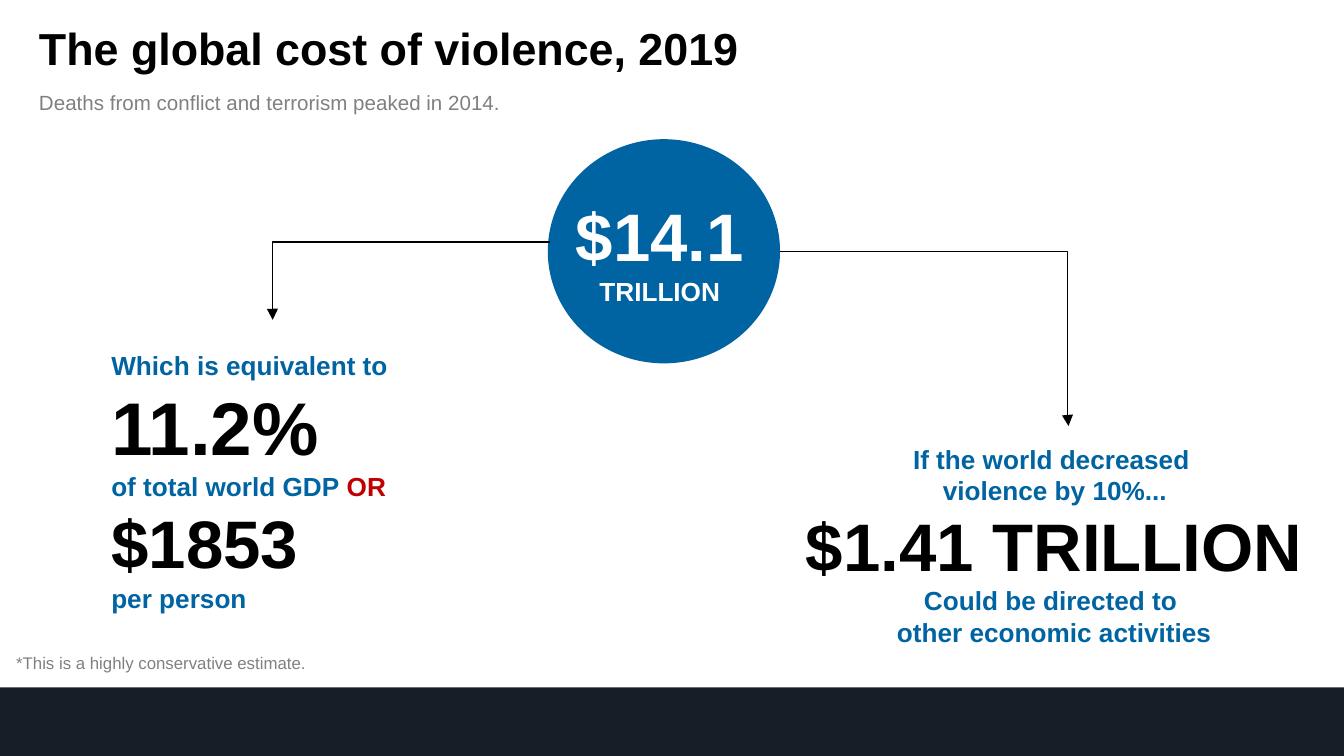
from pptx import Presentation
from pptx.dml.color import RGBColor
from pptx.enum.shapes import MSO_CONNECTOR as CONN, MSO_SHAPE as SHAPE
from pptx.enum.text import MSO_ANCHOR as ANCHOR, PP_ALIGN as ALIGN
from pptx.oxml.ns import qn
from pptx.util import Inches, Pt
from lxml.etree import SubElement

BLACK = RGBColor(0x00, 0x00, 0x00)
WHITE = RGBColor(0xFF, 0xFF, 0xFF)
GREY = RGBColor(0x80, 0x80, 0x80)
BLUE = RGBColor(0x00, 0x63, 0xA2)
RED = RGBColor(0xC0, 0x00, 0x00)
NAVY = RGBColor(0x18, 0x1E, 0x28)
SLIDE_W = 10
SLIDE_H = SLIDE_W * 9 / 16


def add_text(slide, box, paras, align=ALIGN.LEFT, bold=True, inset=True, spacing=None):
    """Add a text box whose paragraphs are lists of (text, size, colour) runs."""
    tf = slide.shapes.add_textbox(*map(Inches, box)).text_frame
    tf.word_wrap = True
    tf.vertical_anchor = ANCHOR.TOP
    if not inset:
        tf.margin_left = tf.margin_right = tf.margin_top = tf.margin_bottom = 0
    for i, runs in enumerate(paras):
        p = tf.add_paragraph() if i else tf.paragraphs[0]
        p.alignment = align
        if spacing:
            p.line_spacing = spacing
        for text, size, color in runs:
            r = p.add_run()
            r.text = text
            r.font.name = "Arial"
            r.font.size = Pt(size)
            r.font.bold = bold
            r.font.color.rgb = color


def add_solid(slide, kind, box, color):
    """Add a preset shape filled and outlined in one colour."""
    s = slide.shapes.add_shape(kind, *map(Inches, box))
    s.shadow.inherit = False
    s.fill.solid()
    s.fill.fore_color.rgb = color
    s.line.color.rgb = color
    s.line.width = Pt(2)
    return s


def add_elbow_arrow(slide, start, end, bend):
    """Run an arrow sideways from start, then down to end."""
    c = slide.shapes.add_connector(CONN.ELBOW, *map(Inches, start + end))
    c.line.color.rgb = BLACK
    c.line.width = Pt(0.75)
    sp_pr = c._element.spPr
    SubElement(sp_pr.find(qn("a:ln")), qn("a:tailEnd"), type="triangle")
    SubElement(sp_pr, qn("a:effectLst"))
    guides = sp_pr.find(qn("a:prstGeom")).get_or_add_avLst()
    SubElement(guides, qn("a:gd"), name="adj1", fmla=f"val {bend}")


def add_heading(slide, x, y, w):
    """Place the title with its subtitle below."""
    add_text(slide, (x, y + 0.49, w, 0.16),
             [[("Deaths from conflict and terrorism peaked in 2014.", 11, GREY)]],
             bold=False, inset=False, spacing=0.9)
    add_text(slide, (x, y, w, 0.41), [[("The global cost of violence, 2019", 24, BLACK)]],
             inset=False, spacing=0.9)


def add_total(slide, x, y, w, h):
    """Place the circle with the total cost and the arrows leaving it."""
    add_solid(slide, SHAPE.OVAL, (x, y, w, h), BLUE)
    add_text(slide, (x - 0.43, y + 0.35, 2.5, 0.94),
             [[("$14.1", 36, WHITE)], [("TRILLION", 14, WHITE)]], ALIGN.CENTER)
    add_elbow_arrow(slide, (x + w + 0.01, y + h / 2), (x + w + 2.16, y + 2.12), 99700)
    add_elbow_arrow(slide, (x, y + 0.75), (x - 2.06, y + 1.33), 100100)


def add_equivalents(slide, x, y, w, h):
    """Place what the total equals in GDP and per person."""
    add_text(slide, (x, y, w, h), [
        [("Which is equivalent to", 14, BLUE)],
        [("11.2%", 40, BLACK)],
        [("of total world GDP ", 14, BLUE), ("OR", 14, RED)],
        [("$1853", 36, BLACK)],
        [("per person", 14, BLUE)],
    ])


def add_savings(slide, x, y, w):
    """Place the condition and the amount it would free."""
    add_text(slide, (x, y + 0.45, w, 1.18), [
        [("$1.41 TRILLION", 36, BLACK)],
        [("Could be directed to ", 14, BLUE)],
        [("other economic activities", 14, BLUE)],
    ], ALIGN.CENTER)
    add_text(slide, (x + 0.52, y, 3.24, 0.57), [
        [("If the world decreased ", 14, BLUE)],
        [("violence by 10%...", 14, BLUE)],
    ], ALIGN.CENTER)


def add_footer(slide, y, w, h):
    """Place the dark band and the note above it."""
    band = add_solid(slide, SHAPE.RECTANGLE, (0, y, w, h), NAVY)
    band.line.fill.background()
    add_text(slide, (0.12, y - 0.24, 8.62, 0.16),
             [[("*This is a highly conservative estimate.", 9, GREY)]],
             bold=False, inset=False, spacing=0.9)


def main():
    """Build and save the slide."""
    prs = Presentation()
    prs.slide_width = Inches(SLIDE_W)
    prs.slide_height = Inches(SLIDE_H)
    slide = prs.slides.add_slide(prs.slide_layouts[6])
    add_footer(slide, SLIDE_H - 0.51, SLIDE_W, 0.51)
    add_heading(slide, 0.29, 0.2, 8.62)
    add_total(slide, 4.09, 1.05, 1.7, 1.64)
    add_equivalents(slide, 0.73, 2.55, 3.1, 2.09)
    add_savings(slide, 5.71, 3.25, 4.27)
    prs.save("out.pptx")


if __name__ == "__main__":
    main()
